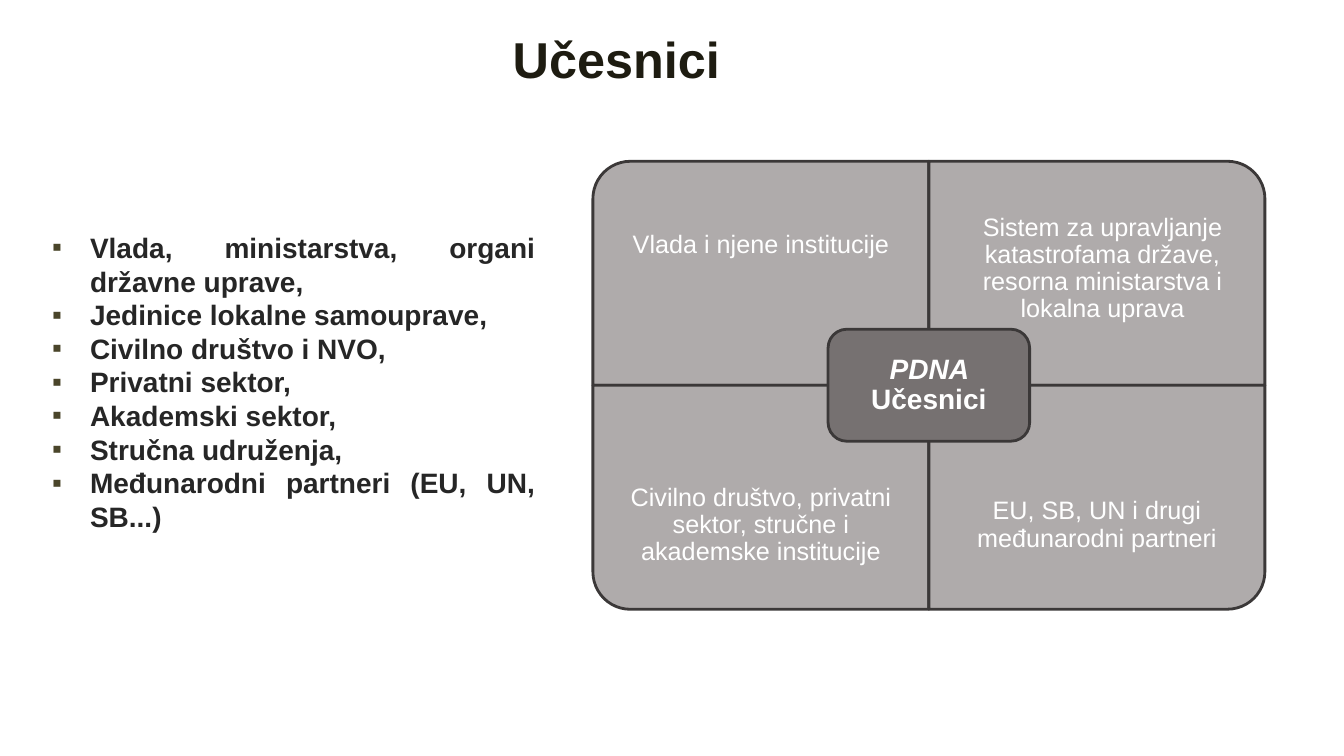
from dataclasses import dataclass

from lxml.etree import SubElement
from pptx import Presentation
from pptx.dml.color import RGBColor
from pptx.enum.shapes import MSO_SHAPE
from pptx.enum.text import MSO_ANCHOR, MSO_AUTO_SIZE, PP_ALIGN
from pptx.oxml.ns import qn
from pptx.shapes.autoshape import Shape
from pptx.slide import Slide
from pptx.text.text import TextFrame, _Paragraph
from pptx.util import Pt


@dataclass(frozen=True)
class Theme:
    font: str = "Arial"
    title: str = "1E1C11"
    body: str = "262626"
    bullet: str = "4A452A"
    quadrant: str = "AFABAB"
    hub: str = "767171"
    outline: str = "3B3838"
    light: str = "FFFFFF"
    title_size: int = 36
    body_size: int = 20
    label_size: int = 18
    line_width: int = 2
    corner: float = 0.167


@dataclass(frozen=True)
class Box:
    left: float
    top: float
    width: float
    height: float

    def lengths(self) -> tuple[Pt, Pt, Pt, Pt]:
        return Pt(self.left), Pt(self.top), Pt(self.width), Pt(self.height)


@dataclass(frozen=True)
class Quadrant:
    text: str
    column: int
    row: int
    rotation: int
    label_top: float


THEME = Theme()
TITLE_BOX = Box(87.8, 21.6, 704.9, 56.9)
LIST_BOX = Box(30.2, 161, 359.3, 226)
MATRIX = Box(423.5, 115.2, 480, 320)
CELL_WIDTH, CELL_HEIGHT = MATRIX.width / 2, MATRIX.height / 2
LABEL_HEIGHT = 120
HUB_WIDTH, HUB_HEIGHT = 144, 80
BULLET_INDENT = 27

PARTICIPANTS = (
    "Vlada, ministarstva, organi državne uprave,",
    "Jedinice lokalne samouprave,",
    "Civilno društvo i NVO,",
    "Privatni sektor,",
    "Akademski sektor,",
    "Stručna udruženja,",
    "Međunarodni partneri (EU, UN, SB...)",
)
QUADRANTS = (
    Quadrant("Vlada i njene institucije", 0, 0, 270, 115.2),
    Quadrant("Sistem za upravljanje katastrofama države, resorna ministarstva i lokalna uprava",
             1, 0, 0, 132),
    Quadrant("Civilno društvo, privatni sektor, stručne i akademske institucije",
             0, 1, 180, 315.2),
    Quadrant("EU, SB, UN i drugi međunarodni partneri", 1, 1, 90, 315.2),
)


def apply_format(target: object, values: dict[str, object]) -> None:
    for name, value in values.items():
        setattr(target, name, value)


def format_frame(frame: TextFrame, anchor: MSO_ANCHOR, side: float, edge: float) -> None:
    """Set wrapping, anchor and the side and top/bottom insets."""
    apply_format(frame, {
        "word_wrap": True, "auto_size": MSO_AUTO_SIZE.NONE, "vertical_anchor": anchor,
        "margin_left": Pt(side), "margin_right": Pt(side),
        "margin_top": Pt(edge), "margin_bottom": Pt(edge),
    })


def add_text(paragraph: _Paragraph, text: str, size: int, color: str,
             bold: bool = False, italic: bool = False) -> None:
    run = paragraph.add_run()
    run.text = text
    apply_format(run.font, {"name": THEME.font, "size": Pt(size), "bold": bold, "italic": italic})
    run.font.color.rgb = RGBColor.from_string(color)


def center(paragraph: _Paragraph) -> None:
    apply_format(paragraph, {"alignment": PP_ALIGN.CENTER, "line_spacing": 0.9,
                             "space_before": Pt(0)})


def add_bullet(paragraph: _Paragraph) -> None:
    properties = paragraph._p.get_or_add_pPr()
    properties.set("marL", str(Pt(BULLET_INDENT)))
    properties.set("indent", str(-Pt(BULLET_INDENT)))
    color = SubElement(properties, qn("a:buClr"))
    SubElement(color, qn("a:srgbClr"), val=THEME.bullet)
    SubElement(properties, qn("a:buFont"), typeface=THEME.font)
    SubElement(properties, qn("a:buChar"), char="▪")


def add_panel(slide: Slide, kind: MSO_SHAPE, box: Box, fill: str) -> Shape:
    """Add an outlined shape with rounded corners."""
    panel = slide.shapes.add_shape(kind, *box.lengths())
    panel.shadow.inherit = False
    panel.adjustments[0] = THEME.corner
    panel.fill.solid()
    panel.fill.fore_color.rgb = RGBColor.from_string(fill)
    panel.line.color.rgb = RGBColor.from_string(THEME.outline)
    panel.line.width = Pt(THEME.line_width)
    return panel


def add_title(slide: Slide) -> None:
    title = slide.shapes.title
    apply_format(title, dict(zip(("left", "top", "width", "height"), TITLE_BOX.lengths())))
    format_frame(title.text_frame, MSO_ANCHOR.TOP, 7.2, 3.6)
    paragraph = title.text_frame.paragraphs[0]
    center(paragraph)
    add_text(paragraph, "Učesnici", THEME.title_size, THEME.title, bold=True)


def add_participants(slide: Slide) -> None:
    frame = slide.shapes.add_textbox(*LIST_BOX.lengths()).text_frame
    format_frame(frame, MSO_ANCHOR.TOP, 7.2, 3.6)
    for index, participant in enumerate(PARTICIPANTS):
        paragraph = frame.add_paragraph() if index else frame.paragraphs[0]
        add_bullet(paragraph)
        paragraph.alignment = PP_ALIGN.JUSTIFY
        add_text(paragraph, participant, THEME.body_size, THEME.body, bold=True)


def add_quadrant(slide: Slide, quadrant: Quadrant) -> None:
    """Add a cell whose rounded corner is turned outwards, and its label."""
    left = MATRIX.left + quadrant.column * CELL_WIDTH
    top = MATRIX.top + quadrant.row * CELL_HEIGHT
    sideways = quadrant.rotation % 180 == 90
    width, height = (CELL_HEIGHT, CELL_WIDTH) if sideways else (CELL_WIDTH, CELL_HEIGHT)
    box = Box(left + (CELL_WIDTH - width) / 2, top + (CELL_HEIGHT - height) / 2, width, height)
    panel = add_panel(slide, MSO_SHAPE.ROUND_1_RECTANGLE, box, THEME.quadrant)
    panel.rotation = quadrant.rotation

    label_box = Box(left + 4 * (quadrant.rotation == 0), quadrant.label_top,
                    CELL_WIDTH, LABEL_HEIGHT)
    frame = slide.shapes.add_textbox(*label_box.lengths()).text_frame
    format_frame(frame, MSO_ANCHOR.MIDDLE, 10, 10)
    center(frame.paragraphs[0])
    add_text(frame.paragraphs[0], quadrant.text, THEME.label_size, THEME.light)


def add_hub(slide: Slide) -> None:
    box = Box(MATRIX.left + (MATRIX.width - HUB_WIDTH) / 2,
              MATRIX.top + (MATRIX.height - HUB_HEIGHT) / 2, HUB_WIDTH, HUB_HEIGHT)
    hub = add_panel(slide, MSO_SHAPE.ROUNDED_RECTANGLE, box, THEME.hub)
    format_frame(hub.text_frame, MSO_ANCHOR.MIDDLE, 6, 6)
    paragraph = hub.text_frame.paragraphs[0]
    center(paragraph)
    add_text(paragraph, "PDNA ", THEME.body_size, THEME.light, bold=True, italic=True)
    add_text(paragraph, "Učesnici", THEME.body_size, THEME.light, bold=True)


def main() -> None:
    presentation = Presentation()
    apply_format(presentation, {"slide_width": Pt(960), "slide_height": Pt(540)})
    slide = presentation.slides.add_slide(presentation.slide_layouts.get_by_name("Title Only"))
    add_title(slide)
    add_participants(slide)
    for quadrant in QUADRANTS:
        add_quadrant(slide, quadrant)
    add_hub(slide)
    presentation.save("out.pptx")


if __name__ == "__main__":
    main()
